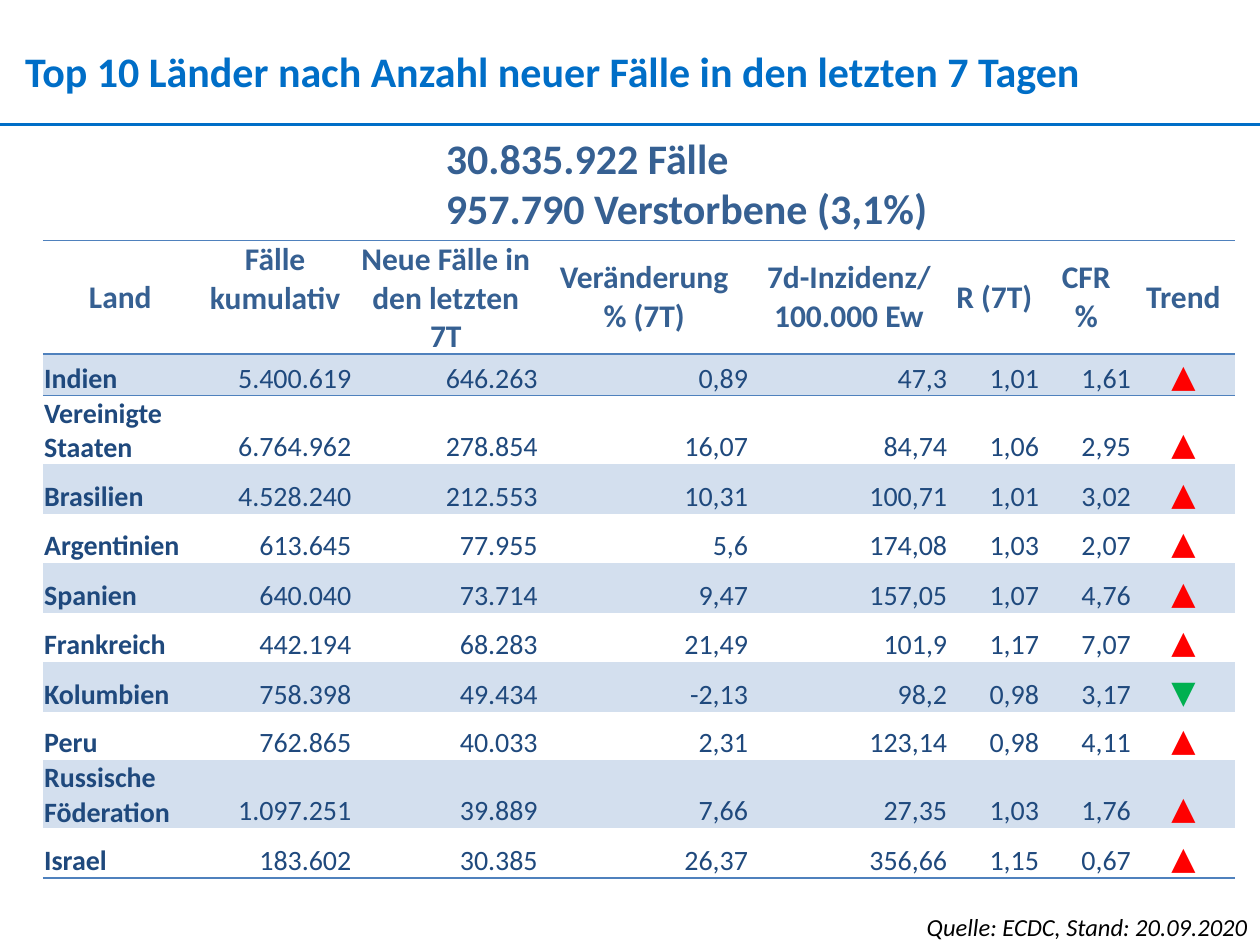
from dataclasses import dataclass

from lxml.etree import SubElement
from pptx import Presentation
from pptx.dml.color import RGBColor
from pptx.enum.shapes import MSO_CONNECTOR
from pptx.enum.text import MSO_ANCHOR, PP_ALIGN
from pptx.oxml import parse_xml
from pptx.oxml.ns import nsdecls, qn
from pptx.util import Pt


@dataclass(frozen=True)
class Theme:
    font: str = "Calibri"
    title: str = "006EC7"
    heading: str = "366092"
    body: str = "1F497D"
    source: str = "000000"
    border: str = "4F81BD"
    band: str = "D3DFEE"
    rising: str = "FF0000"
    falling: str = "00B050"
    title_size: int = 24
    header_size: int = 18
    body_size: int = 16
    source_size: int = 14


THEME = Theme()
PLAIN_TABLE = "{2D5ABB26-0587-4C30-8999-92F81FD0307C}"
NO_MARGINS = (0, 0, 0, 0)
BOX_MARGINS = (7.2, 3.6, 7.2, 3.6)
HEADER_MARGINS = (4.5, 0, 4.5, 0)
BODY_MARGINS = (0.75, 0.75, 0.75, 0)

COLUMN_WIDTHS = [88.5, 88.5, 106.5, 120.2, 113.8, 52.5, 52.5, 58.5]
ROW_HEIGHTS = [62.5, 23.8, 38.2, 28.3, 28.3, 28.3, 28.3, 28.3, 27.5, 28.8, 28.3]
HEADERS = ["Land", "Fälle kumulativ", "Neue Fälle in den letzten 7T",
           "Veränderung % (7T)", "7d-Inzidenz/ 100.000 Ew", "R (7T)",
           "CFR %", "Trend"]
COUNTRIES = [
    ["Indien", "5.400.619", "646.263", "0,89", "47,3", "1,01", "1,61", "▲"],
    ["Vereinigte Staaten", "6.764.962", "278.854", "16,07", "84,74", "1,06", "2,95", "▲"],
    ["Brasilien", "4.528.240", "212.553", "10,31", "100,71", "1,01", "3,02", "▲"],
    ["Argentinien", "613.645", "77.955", "5,6", "174,08", "1,03", "2,07", "▲"],
    ["Spanien", "640.040", "73.714", "9,47", "157,05", "1,07", "4,76", "▲"],
    ["Frankreich", "442.194", "68.283", "21,49", "101,9", "1,17", "7,07", "▲"],
    ["Kolumbien", "758.398", "49.434", "-2,13", "98,2", "0,98", "3,17", "▼"],
    ["Peru", "762.865", "40.033", "2,31", "123,14", "0,98", "4,11", "▲"],
    ["Russische Föderation", "1.097.251", "39.889", "7,66", "27,35", "1,03", "1,76", "▲"],
    ["Israel", "183.602", "30.385", "26,37", "356,66", "1,15", "0,67", "▲"],
]


class SlideBuilder:
    def __init__(self, slide, theme):
        self.slide = slide
        self.theme = theme

    def fill_text(self, frame, lines, color, size, align=PP_ALIGN.LEFT, **styles):
        formats = {"name": self.theme.font, "size": Pt(size), **styles}
        for index, line in enumerate(lines):
            para = frame.add_paragraph() if index else frame.paragraphs[0]
            para.alignment = align
            span = para.add_run()
            span.text = line
            for name, value in formats.items():
                setattr(span.font, name, value)
            span.font.color.rgb = RGBColor.from_string(color)

    def set_margins(self, target, margins):
        for side, value in zip(("left", "top", "right", "bottom"), margins):
            setattr(target, f"margin_{side}", Pt(value))

    def text(self, place, lines, color, size, margins=BOX_MARGINS, wrap=True, **styles):
        box = self.slide.shapes.add_textbox(*map(Pt, place))
        frame = box.text_frame
        frame.word_wrap = wrap
        self.set_margins(frame, margins)
        self.fill_text(frame, lines, color, size, **styles)

    def rule(self, left, right, top, color, width):
        line = self.slide.shapes.add_connector(
            MSO_CONNECTOR.STRAIGHT, Pt(left), Pt(top), Pt(right), Pt(top))
        line.line.color.rgb = RGBColor.from_string(color)
        line.line.width = Pt(width)
        SubElement(line._element.spPr, qn("a:effectLst"))

    def table(self, left, top, widths, heights):
        frame = self.slide.shapes.add_table(
            len(heights), len(widths), Pt(left), Pt(top), Pt(sum(widths)), Pt(sum(heights)))
        table = frame.table
        table.first_row = table.horz_banding = False
        table._tbl.tblPr.find(qn("a:tableStyleId")).text = PLAIN_TABLE
        for column, width in zip(table.columns, widths):
            column.width = Pt(width)
        for row, height in zip(table.rows, heights):
            row.height = Pt(height)
        return table

    def cell(self, cell, text, color, size, margins, anchor, fill=None, edges=(), **styles):
        cell.vertical_anchor = anchor
        self.set_margins(cell, margins)
        self.fill_text(cell.text_frame, [text], color, size, **styles)
        # Borders must come before the fill
        for edge in edges:
            cell._tc.get_or_add_tcPr().append(parse_xml(
                f'<a:{edge} {nsdecls("a")} w="{Pt(1)}"><a:solidFill>'
                f'<a:srgbClr val="{self.theme.border}"/></a:solidFill></a:{edge}>'))
        if fill:
            cell.fill.solid()
            cell.fill.fore_color.rgb = RGBColor.from_string(fill)
        else:
            cell.fill.background()


def fill_table(builder, table):
    theme = builder.theme
    # Header row
    for column, label in enumerate(HEADERS):
        anchor = MSO_ANCHOR.TOP if label == "Fälle kumulativ" else MSO_ANCHOR.MIDDLE
        builder.cell(table.cell(0, column), label, theme.heading, theme.header_size,
                     HEADER_MARGINS, anchor, edges=("lnT", "lnB"),
                     align=PP_ALIGN.CENTER, bold=True)

    # Country rows: name, figures, trend arrow
    trend_column = len(HEADERS) - 1
    for row, country in enumerate(COUNTRIES, 1):
        edges = {1: ("lnT",), len(COUNTRIES): ("lnB",)}.get(row, ())
        for column, value in enumerate(country):
            color, size, align = theme.body, theme.body_size, PP_ALIGN.RIGHT
            if column == 0:
                align = PP_ALIGN.LEFT
            elif column == trend_column:
                color = theme.rising if value == "▲" else theme.falling
                size, align = theme.header_size, PP_ALIGN.CENTER
            builder.cell(table.cell(row, column), value, color, size, BODY_MARGINS,
                         MSO_ANCHOR.BOTTOM, fill=theme.band if row % 2 else None,
                         edges=edges, align=align, bold=column == 0)


def main():
    deck = Presentation()
    deck.slide_width, deck.slide_height = Pt(720), Pt(540)
    builder = SlideBuilder(deck.slides.add_slide(deck.slide_layouts[6]), THEME)

    # Title and rule
    builder.text((14.4, 25.9, 693.4, 28.8),
                 ["Top 10 Länder nach Anzahl neuer Fälle in den letzten 7 Tagen"],
                 THEME.title, THEME.title_size, margins=NO_MARGINS, bold=True)
    builder.rule(0, 720, 71.3, THEME.title, 1.5)

    # Worldwide totals
    builder.text((247.7, 72, 292.3, 65.5),
                 ["30.835.922 Fälle", "957.790 Verstorbene (3,1%)"],
                 THEME.heading, THEME.title_size, wrap=False, bold=True)

    # Source
    builder.text((465.1, 517.7, 254.9, 24.2), ["Quelle: ECDC, Stand: 20.09.2020"],
                 THEME.source, THEME.source_size, align=PP_ALIGN.RIGHT, italic=True)

    # Country table
    fill_table(builder, builder.table(24.5, 137.5, COLUMN_WIDTHS, ROW_HEIGHTS))

    deck.save("out.pptx")


if __name__ == "__main__":
    main()
